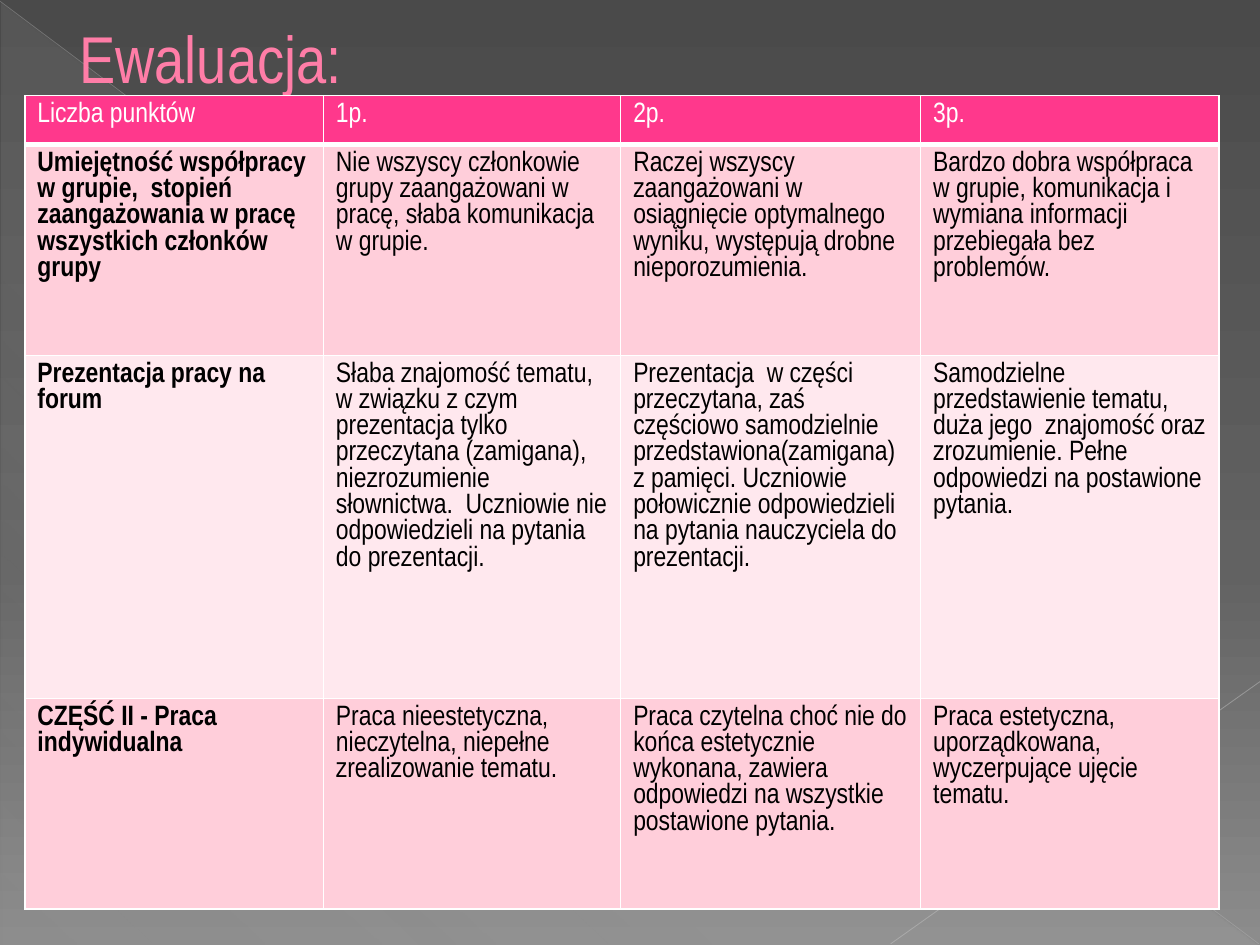
from lxml import etree
from pptx import Presentation
from pptx import util as u
from pptx.dml.color import RGBColor
from pptx.enum import shapes, text
from pptx.oxml.ns import qn

Pt = u.Pt
FONT = "Arial Narrow"
HEX = {
    "top": "4A4A4A", "mid": "626262", "low": "8C8C8C",
    "veil": "D2D2D2", "long": "BFBFBF", "short": "C6C6C6",
    "title": "FF7DA7", "head": "FF388C", "odd": "FFCEDA", "even": "FFE8EE",
    "white": "FFFFFF", "black": "000000",
}
ROWS = [
    ["Liczba punktów", "1p.", "2p.", "3p."],
    ["Umiejętność współpracy w grupie,  stopień zaangażowania w pracę "
     "wszystkich członków grupy",
     "Nie wszyscy członkowie grupy zaangażowani w pracę, słaba komunikacja "
     "w grupie.",
     "Raczej wszyscy zaangażowani w osiągnięcie optymalnego wyniku, "
     "występują drobne nieporozumienia.",
     "Bardzo dobra współpraca w grupie, komunikacja i wymiana informacji "
     "przebiegała bez problemów."],
    ["Prezentacja pracy na forum",
     "Słaba znajomość tematu, w związku z czym prezentacja tylko przeczytana "
     "(zamigana), niezrozumienie słownictwa.  Uczniowie nie odpowiedzieli na "
     "pytania do prezentacji.",
     "Prezentacja  w części przeczytana, zaś częściowo samodzielnie "
     "przedstawiona(zamigana) z pamięci. Uczniowie połowicznie odpowiedzieli "
     "na pytania nauczyciela do prezentacji.",
     "Samodzielne przedstawienie tematu, duża jego  znajomość oraz "
     "zrozumienie. Pełne odpowiedzi na postawione pytania."],
    ["CZĘŚĆ II - Praca indywidualna",
     "Praca nieestetyczna, nieczytelna, niepełne zrealizowanie tematu.",
     "Praca czytelna choć nie do końca estetycznie wykonana, zawiera "
     "odpowiedzi na wszystkie postawione pytania.",
     "Praca estetyczna, uporządkowana, wyczerpujące ujęcie tematu."],
]


def rgb(name):
    return RGBColor.from_string(HEX[name])


def style(run, size, color, bold=False):
    form = {"name": FONT, "size": Pt(size), "bold": bold}
    for key, val in form.items():
        setattr(run.font, key, val)
    run.font.color.rgb = rgb(color)


def fade(node, alpha):
    etree.SubElement(node, qn("a:alpha"), val=str(alpha * 1000))


def blend(root, stops, angle):
    """Fill the gradient under root with (place, colour, alpha) stops."""
    grad = next(root.iter(qn("a:gradFill")))
    grad.clear()
    items = etree.SubElement(grad, qn("a:gsLst"))
    for place, name, alpha in stops:
        stop = etree.SubElement(items, qn("a:gs"), pos=str(place * 1000))
        fade(etree.SubElement(stop, qn("a:srgbClr"), val=HEX[name]), alpha)
    etree.SubElement(grad, qn("a:lin"), ang=str(angle * 60000), scaled="0")


def stroke(slide, ends, color, width, alpha):
    line = slide.shapes.add_connector(
        shapes.MSO_CONNECTOR.STRAIGHT, *[Pt(v) for v in ends])
    line.line.width = Pt(width)
    line.line.color.rgb = rgb(color)
    props = line._element.spPr
    fade(next(props.iter(qn("a:srgbClr"))), alpha)
    etree.SubElement(props, qn("a:effectLst"))


def border(cell, side, width):
    props = cell._tc.get_or_add_tcPr()
    line = etree.SubElement(props, qn("a:ln" + side), w=str(Pt(width)))
    fill = etree.SubElement(line, qn("a:solidFill"))
    etree.SubElement(fill, qn("a:srgbClr"), val=HEX["white"])


def backdrop(slide, x, y, w, h):
    slide.background.fill.gradient()
    blend(slide._element,
          [(0, "top", 100), (60, "mid", 100), (100, "low", 100)], 90)
    # Pale corner triangle
    veil = slide.shapes.add_shape(
        shapes.MSO_SHAPE.RIGHT_TRIANGLE,
        Pt(x + 0.7), Pt(y + 1.4), Pt(w - 1.4), Pt(h - 1.4))
    veil.shadow.inherit = False
    veil.line.fill.background()
    veil.fill.gradient()
    blend(veil._element,
          [(0, "veil", 10), (70, "veil", 8), (100, "veil", 1)], 133)
    # Thin diagonals
    stroke(slide, (x, y + 0.7, x + w - 0.7, y + h - 0.7), "long", 0.39, 35)
    stroke(slide, (x + w, y + 389.5, x + 509, y + h - 0.7), "short", 0.47, 45)


def heading(slide, x, y, w, h):
    box = slide.shapes.add_textbox(Pt(x), Pt(y), Pt(w), Pt(h))
    frame = box.text_frame
    form = {"word_wrap": True, "margin_left": Pt(45.4),
            "vertical_anchor": text.MSO_ANCHOR.MIDDLE}
    for key, val in form.items():
        setattr(frame, key, val)
    run = frame.paragraphs[0].add_run()
    run.text = "Ewaluacja:"
    style(run, 37.8, "title")


def rubric(slide, x, y, w, h):
    cols, tall = [170.6, 169.9, 171.4, 170.6], [28.1, 120.4, 196, 120.4]
    grid = slide.shapes.add_table(
        len(tall), len(cols), Pt(x), Pt(y), Pt(w), Pt(h)).table
    for col, size in zip(grid.columns, cols):
        col.width = Pt(size)
    for row, size in zip(grid.rows, tall):
        row.height = Pt(size)
    for r, words in enumerate(ROWS):
        back = "head" if r == 0 else "odd" if r % 2 else "even"
        for c, word in enumerate(words):
            cell = grid.cell(r, c)
            for side in "LRTB":
                border(cell, side, 3 if r == 0 and side == "B" else 1)
            cell.fill.solid()
            cell.fill.fore_color.rgb = rgb(back)
            run = cell.text_frame.paragraphs[0].add_run()
            run.text = word
            style(run, 16, "black" if r else "white", r > 0 and c == 0)


def main():
    deck = Presentation()
    deck.slide_width, deck.slide_height = Pt(720), Pt(540)
    slide = deck.slides.add_slide(deck.slide_layouts[6])
    backdrop(slide, 0, 0, 720, 540)
    heading(slide, 0, 21.6, 648, 21.6)
    rubric(slide, 14.2, 54.6, 682.5, 464.9)
    deck.save("out.pptx")


if __name__ == "__main__":
    main()
